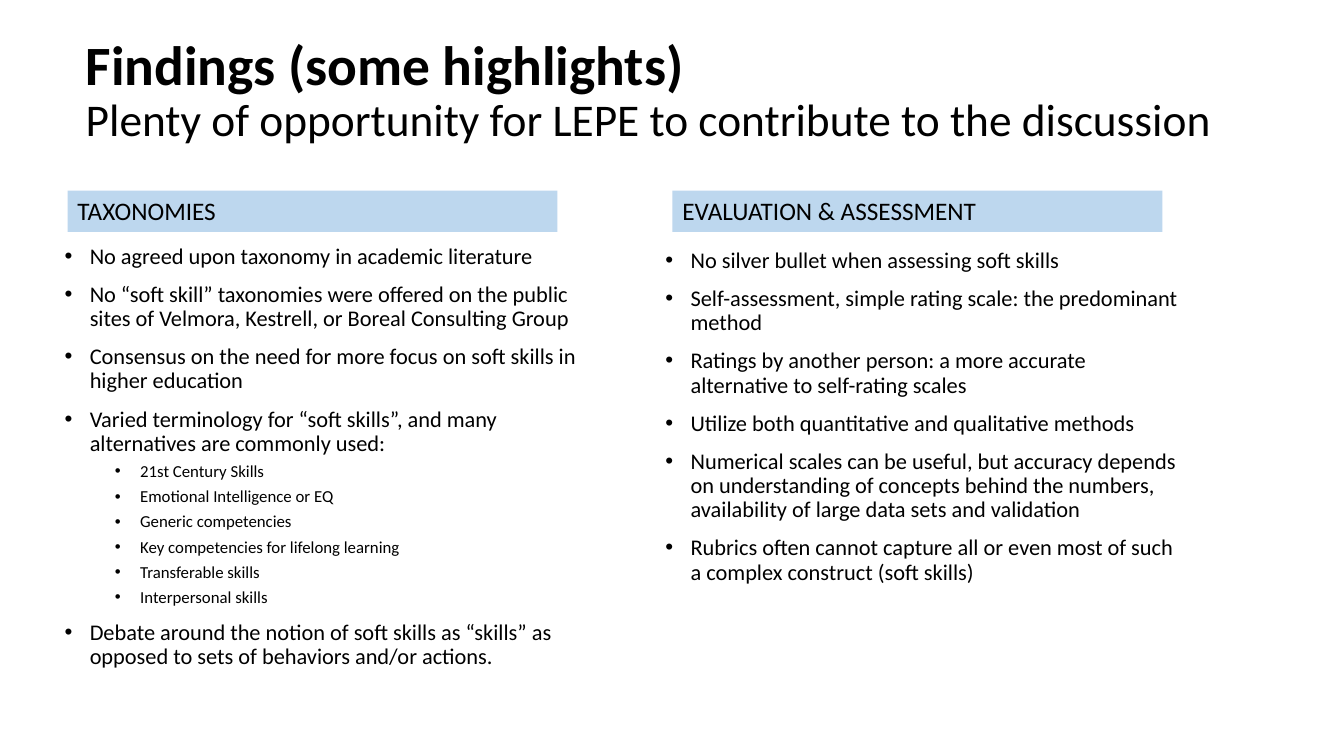
import copy
import dataclasses

import lxml.etree
import pptx
import pptx.dml.color
import pptx.enum.shapes
import pptx.enum.text
import pptx.oxml.ns
import pptx.util

Inches = pptx.util.Inches
FONT = "Calibri"
BLACK = "000000"
HEADER_BLUE = "BDD7EE"
HEADER_TOP, HEADER_WIDTH, HEADER_HEIGHT = 1.89, 4.86, 0.41
LIST_WIDTH = 5.36


@dataclasses.dataclass(frozen=True)
class Level:
    size: float
    margin: float
    space_before: float


@dataclasses.dataclass(frozen=True)
class Column:
    heading: str
    heading_left: float
    placeholder: int
    left: float
    top: float
    height: float
    items: tuple[tuple[int, str], ...]


LEVELS = (Level(16, 0.25, 10), Level(12, 0.75, 5))

COLUMNS = (
    Column("TAXONOMIES", 0.67, 1, 0.54, 2.38, 5.01, (
        (0, "No agreed upon taxonomy in academic literature"),
        (0, "No “soft skill” taxonomies were offered on the public sites of "
            "Velmora, Kestrell, or Boreal Consulting Group"),
        (0, "Consensus on the need for more focus on soft skills in higher education"),
        (0, "Varied terminology for “soft skills”, and many alternatives are commonly used:"),
        (1, "21st Century Skills"),
        (1, "Emotional Intelligence or EQ"),
        (1, "Generic competencies"),
        (1, "Key competencies for lifelong learning"),
        (1, "Transferable skills"),
        (1, "Interpersonal skills"),
        (0, "Debate around the notion of soft skills as “skills” as opposed to "
            "sets of behaviors and/or actions."),
    )),
    Column("EVALUATION & ASSESSMENT", 6.67, 2, 6.5, 2.42, 4.4, (
        (0, "No silver bullet when assessing soft skills"),
        (0, "Self-assessment, simple rating scale: the predominant method"),
        (0, "Ratings by another person: a more accurate alternative to self-rating scales"),
        (0, "Utilize both quantitative and qualitative methods"),
        (0, "Numerical scales can be useful, but accuracy depends on understanding of "
            "concepts behind the numbers, availability of large data sets and validation"),
        (0, "Rubrics often cannot capture all or even most of such a complex "
            "construct (soft skills)"),
    )),
)


def color(value: str) -> pptx.dml.color.RGBColor:
    return pptx.dml.color.RGBColor.from_string(value)


def write(paragraph, text: str, *, size: float, bold: bool = False, fill: str = BLACK):
    paragraph.alignment = pptx.enum.text.PP_ALIGN.LEFT
    run = paragraph.add_run()
    run.text = text
    run.font.name = FONT
    run.font.size = pptx.util.Pt(size)
    run.font.bold = bold
    run.font.color.rgb = color(fill)
    return run


def place(shape, left: float, top: float, width: float, height: float) -> None:
    shape.left, shape.top = Inches(left), Inches(top)
    shape.width, shape.height = Inches(width), Inches(height)


def prepare_frame(shape, anchor: pptx.enum.text.MSO_ANCHOR):
    frame = shape.text_frame
    frame.word_wrap = True
    frame.auto_size = pptx.enum.text.MSO_AUTO_SIZE.NONE
    frame.vertical_anchor = anchor
    return frame


def add_bullet(paragraph, margin: float) -> None:
    properties = paragraph._p.get_or_add_pPr()
    properties.set("marL", str(Inches(margin)))
    properties.set("indent", str(Inches(-0.25)))
    for tag, name, value in (("a:buFont", "typeface", "Arial"), ("a:buChar", "char", "•")):
        lxml.etree.SubElement(properties, pptx.oxml.ns.qn(tag)).set(name, value)


def draw_title(slide) -> None:
    title = slide.shapes.title
    place(title, 0.75, 0.19, 11.5, 1.45)
    paragraph = prepare_frame(title, pptx.enum.text.MSO_ANCHOR.MIDDLE).paragraphs[0]
    paragraph.line_spacing = 0.9
    heading = write(paragraph, "Findings (some highlights)", size=39.6, bold=True)
    paragraph.add_line_break()
    paragraph._p[-1].append(copy.deepcopy(heading._r.rPr))
    write(paragraph, "Plenty of opportunity for LEPE to contribute to the discussion", size=32.4)


def draw_header(slide, column: Column) -> None:
    header = slide.shapes.add_shape(
        pptx.enum.shapes.MSO_SHAPE.RECTANGLE, Inches(column.heading_left),
        Inches(HEADER_TOP), Inches(HEADER_WIDTH), Inches(HEADER_HEIGHT))
    header.shadow.inherit = False
    header.fill.solid()
    header.fill.fore_color.rgb = color(HEADER_BLUE)
    header.line.fill.background()
    frame = prepare_frame(header, pptx.enum.text.MSO_ANCHOR.TOP)
    write(frame.paragraphs[0], column.heading, size=18)


def draw_list(slide, column: Column) -> None:
    body = slide.placeholders[column.placeholder]
    place(body, column.left, column.top, LIST_WIDTH, column.height)
    frame = prepare_frame(body, pptx.enum.text.MSO_ANCHOR.TOP)
    for index, (depth, text) in enumerate(column.items):
        paragraph = frame.add_paragraph() if index else frame.paragraphs[0]
        level = LEVELS[depth]
        paragraph.level = depth
        paragraph.line_spacing = 0.9
        paragraph.space_before = pptx.util.Pt(level.space_before)
        add_bullet(paragraph, level.margin)
        write(paragraph, text, size=level.size)


def main() -> None:
    presentation = pptx.Presentation()
    presentation.slide_width = Inches(13.33)
    presentation.slide_height = Inches(7.5)
    slide = presentation.slides.add_slide(presentation.slide_layouts.get_by_name("Two Content"))
    draw_title(slide)
    for column in COLUMNS:
        draw_list(slide, column)
        draw_header(slide, column)
    presentation.save("out.pptx")


if __name__ == "__main__":
    main()
